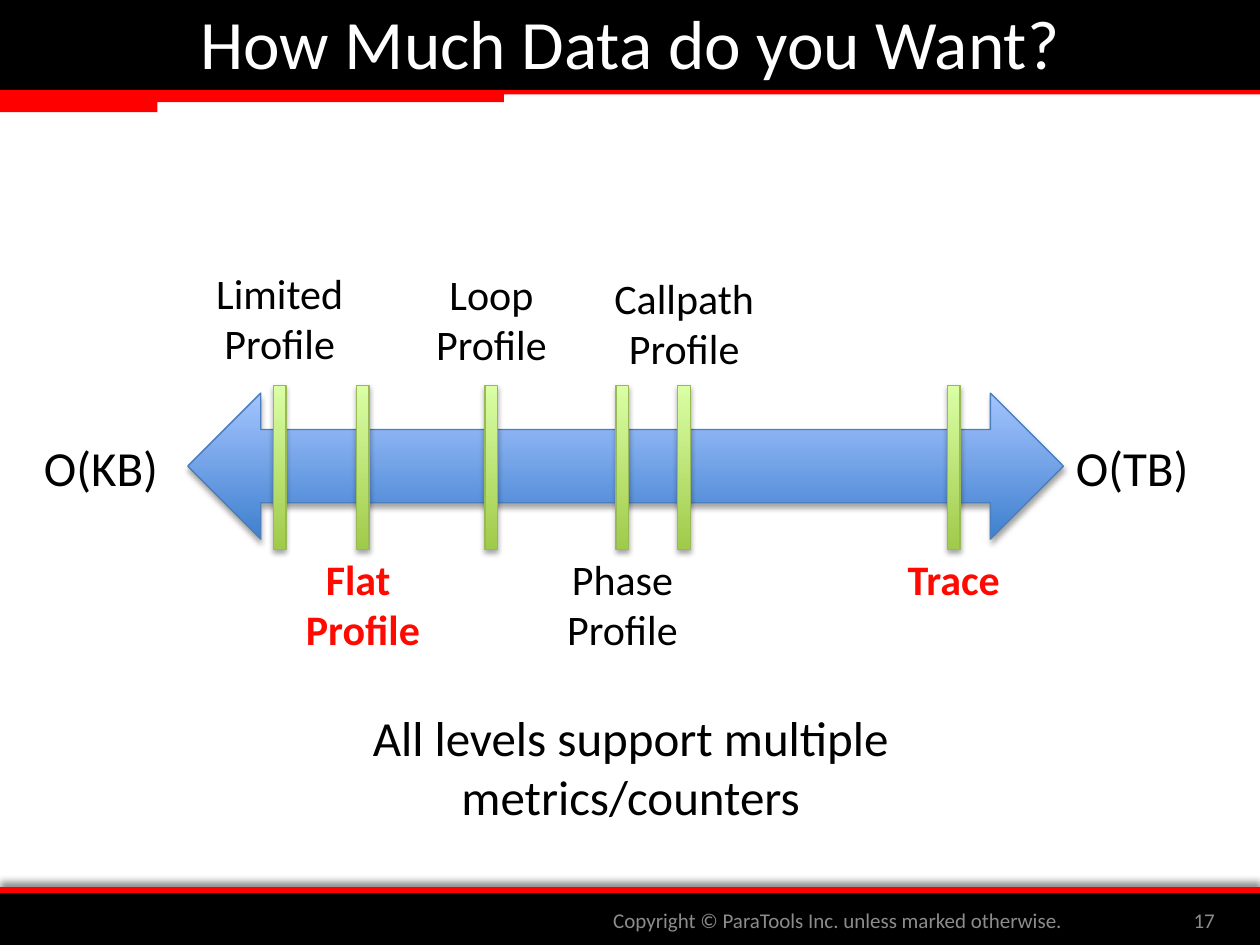
from lxml import etree
from pptx import Presentation
from pptx.dml.color import RGBColor
from pptx.enum.shapes import MSO_SHAPE
from pptx.enum.text import MSO_ANCHOR, MSO_AUTO_SIZE, PP_ALIGN
from pptx.oxml import parse_xml
from pptx.oxml.ns import nsdecls
from pptx.util import Inches, Pt

RECT, ARROW = MSO_SHAPE.RECTANGLE, MSO_SHAPE.LEFT_RIGHT_ARROW
LEFT, CENTER, RIGHT = PP_ALIGN.LEFT, PP_ALIGN.CENTER, PP_ALIGN.RIGHT
TOP, MIDDLE = MSO_ANCHOR.TOP, MSO_ANCHOR.MIDDLE
GROW, FIXED = MSO_AUTO_SIZE.SHAPE_TO_FIT_TEXT, MSO_AUTO_SIZE.NONE
FONT = "Calibri"
COLORS = {
    "black": "000000", "white": "FFFFFF", "red": "FF0000", "mark": "FF0900",
    "grey": "8C8C8C", "blue line": "4B7EBC", "green line": "98B955",
    "blue low": "3F80CE", "blue high": "A4C4FF",
    "green low": "A0CA4A", "green high": "DAFFA5",
}
RGB = {name: RGBColor.from_string(code) for name, code in COLORS.items()}

prs = Presentation()
prs.slide_width, prs.slide_height = Inches(10), Inches(7.5)
slide = prs.slides.add_slide(prs.slide_layouts[5])
shapes = slide.shapes


def add_shape(kind, box, fill, line=None, width=0.75, shadow=None):
    """Draw a shape; a pair of fills runs from bottom to top, and
    shadow is (opacity %, blur pt, distance pt, direction)."""
    shape = shapes.add_shape(kind, *map(Inches, box))
    if isinstance(fill, tuple):
        shape.fill.gradient()
        shape.fill.gradient_angle = 90
        for stop, name, place in zip(shape.fill.gradient_stops, fill, (0, 1)):
            stop.color.rgb = RGB[name]
            stop.position = place
    else:
        shape.fill.solid()
        shape.fill.fore_color.rgb = RGB[fill]
    if line:
        shape.line.color.rgb = RGB[line]
        shape.line.width = Pt(width)
    else:
        shape.line.fill.background()
    shape.shadow.inherit = False
    if shadow:
        alpha, blur, dist, angle = shadow
        effects = shape._element.spPr.find("{*}effectLst")
        effects.append(parse_xml(
            f'<a:outerShdw {nsdecls("a")} blurRad="{Pt(blur)}" dist="{Pt(dist)}" '
            f'dir="{angle * 60000}" rotWithShape="0"><a:srgbClr val="{COLORS["black"]}">'
            f'<a:alpha val="{alpha * 1000}"/></a:srgbClr></a:outerShdw>'))


def set_text(shape, text, size, color="black", align=CENTER, anchor=TOP,
             wrap=True, fit=GROW, bold=False):
    frame = shape.text_frame
    frame.text = text
    frame.word_wrap, frame.auto_size = wrap, fit
    frame.vertical_anchor = anchor
    par = frame.paragraphs[0]
    par.alignment = align
    for run in par.runs:
        run.font.name, run.font.size = FONT, Pt(size)
        run.font.bold = bold
        run.font.color.rgb = RGB[color]


# Footer and header bands
add_shape(RECT, (0, 7.04, 10, 0.11), "red", shadow=(43, 4, 3, 270))
add_shape(RECT, (0, 7.1, 10, 0.4), "black", "black", 2)
for top, width, height in [(0.64, 10, 0.11), (0.56, 1.25, 0.33), (0.59, 4, 0.22)]:
    add_shape(RECT, (0, top, width, height), "red")
add_shape(RECT, (0, 0, 10, 0.7), "black", "black", 2)

# The title goes in front of its band
title = shapes.title
title.left, title.top, title.width, title.height = map(Inches, (0, -0.02, 10, 0.7))
set_text(title, "How Much Data do you Want?", 39.6, "white", anchor=MIDDLE, fit=FIXED)
shapes._spTree.append(title._element)

# Data scale, with a marker and a label centred on each level
soft = (35, 3.1, 1.8, 90)
add_shape(ARROW, (1.49, 3.12, 6.95, 1.16), ("blue low", "blue high"), "blue line",
          shadow=soft)
levels = [
    ("Limited\vProfile", 2.22, 2.07, 1.22, 0.91, False),
    ("Flat \vProfile", 2.88, 4.34, 1.12, 0.91, True),
    ("Loop\vProfile", 3.9, 2.08, 1.09, 0.91, False),
    ("Phase\vProfile", 4.94, 4.34, 1.12, 0.91, False),
    ("Callpath\vProfile", 5.43, 2.11, 1.32, 0.91, False),
    ("Trace", 7.57, 4.34, 0.96, 0.5, True),
]
for text, mid, top, width, height, key in levels:
    label = shapes.add_textbox(*map(Inches, (mid - width / 2, top, width, height)))
    set_text(label, text, 24, "mark" if key else "black", wrap=False, bold=key)
    add_shape(RECT, (mid - 0.05, 3.06, 0.1, 1.3), ("green low", "green high"),
              "green line", shadow=soft)

note = shapes.add_textbox(*map(Inches, (2.83, 5.57, 4.35, 1.04)))
set_text(note, "All levels support multiple metrics/counters", 28)
for text, left in [("O(KB)", 0.25), ("O(TB)", 8.44)]:
    end = shapes.add_textbox(*map(Inches, (left, 3.42, 1.12, 0.57)))
    set_text(end, text, 28, align=LEFT, wrap=False)

# Footer text
footer = [
    ("Copyright © ParaTools Inc. unless marked otherwise.", 3.62, 4.91),
    ("17", 8.75, 0.99),
]
for text, left, width in footer:
    box = shapes.add_textbox(*map(Inches, (left, 7.1, width, 0.4)))
    set_text(box, text, 12, "grey", RIGHT, MIDDLE, fit=FIXED)

prs.save("out.pptx")
